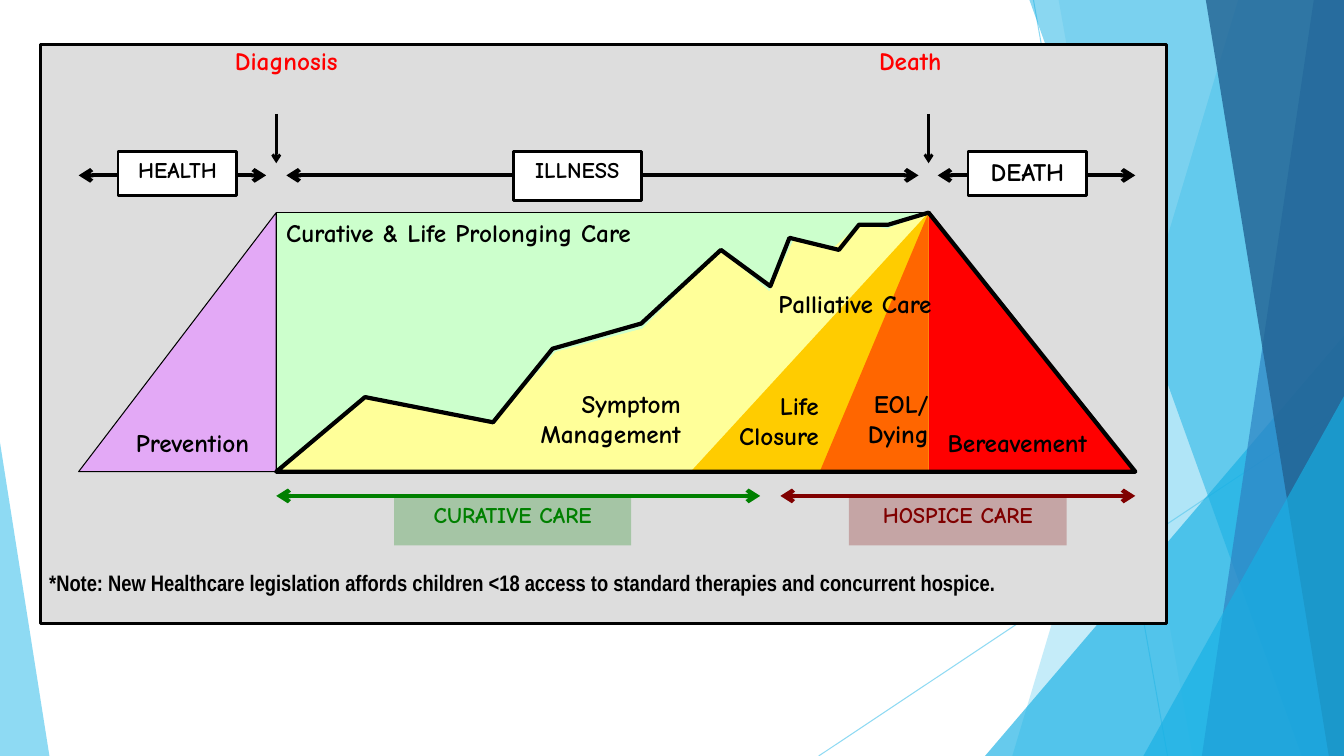
from lxml.etree import SubElement
from pptx import Presentation
from pptx.dml.color import RGBColor
from pptx.enum.shapes import MSO_CONNECTOR as CONNECTOR, MSO_SHAPE as SHAPE
from pptx.enum.text import MSO_ANCHOR as ANCHOR, PP_ALIGN as ALIGN
from pptx.oxml.ns import qn
from pptx.util import Inches, Pt

BLACK = RGBColor(0x00, 0x00, 0x00)
WHITE = RGBColor(0xFF, 0xFF, 0xFF)
GRAY = RGBColor(0xDD, 0xDD, 0xDD)
RED = RGBColor(0xFF, 0x00, 0x00)
PURPLE = RGBColor(0xE3, 0xA9, 0xF6)
MINT = RGBColor(0xCC, 0xFF, 0xCC)
YELLOW = RGBColor(0xFF, 0xFF, 0x99)
AMBER = RGBColor(0xFF, 0xCC, 0x00)
ORANGE = RGBColor(0xFF, 0x66, 0x00)
GREEN = RGBColor(0x00, 0x80, 0x00)
MAROON = RGBColor(0x80, 0x00, 0x00)
SKY = RGBColor(0x5F, 0xCB, 0xEF)
CYAN = RGBColor(0x17, 0xB0, 0xE4)
BLUE = RGBColor(0x2E, 0x83, 0xC3)
NAVY = RGBColor(0x22, 0x62, 0x92)

HAND_FONT = "Comic Neue"
NOTE_FONT = "Arial Narrow"
SLIDE_WIDTH, SLIDE_HEIGHT = 13.33, 7.5

BACK_LINES = [((10.25, 0), (11.58, SLIDE_HEIGHT)), ((SLIDE_WIDTH, 4.03), (8.12, SLIDE_HEIGHT))]
# top-left x, bottom-left x, colour, opacity
BACK_BANDS_LOW = [(12.28, 10.04, SKY, 36), (10.5, 11.83, SKY, 20)]
BACK_BANDS_HIGH = [(10.21, 12.91, CYAN, 50), (13.03, 11.92, BLUE, 70), (11.96, 13.18, NAVY, 80)]
BACK_TRIANGLE_LOW = [(9.77, 3.33, 3.56, 4.17, 1, CYAN, 66)]
BACK_TRIANGLES_HIGH = [(11.34, 3.93, 1.99, 3.57, 1, CYAN, 66), (0, 4.39, 0.49, 3.11, 0, SKY, 70)]

PANEL = (0.4, 0.44, 11.17, 5.75)
START_X, DIAGNOSIS_X, DEATH_X, END_X = 0.78, 2.74, 9.21, 11.26
TOP, BASE = 2.11, 4.68
PHASE_Y, CARE_Y = 1.74, 4.92
PEAK = (DEATH_X, TOP)
DEATH_BASE = (DEATH_X, BASE)
CORNERS = [PEAK, (END_X, BASE), (DIAGNOSIS_X, BASE)]

PREVENTION = [(DIAGNOSIS_X, BASE), (DIAGNOSIS_X, TOP), (START_X, BASE)]
REGIONS = [
    (CORNERS + [(3.62, 3.94), (4.89, 4.19), (5.51, 3.49), (6.37, 3.26), (7.15, 2.48),
                (7.63, 2.89), (7.87, 2.38), (8.24, 2.48), (8.53, 2.22), (8.8, 2.27)], YELLOW),
    ([DEATH_BASE, PEAK, (END_X, BASE)], RED),
    ([PEAK, DEATH_BASE, (6.85, BASE)], AMBER),
    ([PEAK, DEATH_BASE, (8.13, BASE)], ORANGE),
]
OUTLINE = CORNERS + [(3.62, 3.94), (4.89, 4.19), (5.48, 3.46), (6.36, 3.21), (7.15, 2.48),
                     (7.64, 2.84), (7.83, 2.36), (8.32, 2.48), (8.52, 2.23), (8.81, 2.23)]

SPANS = [
    (START_X, 2.64, PHASE_Y, BLACK),
    (2.84, 9.11, PHASE_Y, BLACK),
    (9.3, END_X, PHASE_Y, BLACK),
    (DIAGNOSIS_X, 7.54, CARE_Y, GREEN),
    (7.74, END_X, CARE_Y, MAROON),
]
CARE_BOXES = [
    ("CURATIVE CARE", (3.91, CARE_Y, 2.35, 0.49), GREEN),
    ("HOSPICE CARE", (8.42, CARE_Y, 2.16, 0.49), MAROON),
]
PHASE_BOXES = [
    ("HEALTH", (1.17, 1.5, 1.18, 0.44), 16),
    ("ILLNESS", (5.09, 1.5, 1.27, 0.49), 16),
    ("DEATH", (9.6, 1.5, 1.18, 0.44), 18),
]
LABELS = [
    ("Diagnosis", (1.76, 0.4, 2.16, 0.37), ALIGN.CENTER, RED),
    ("Death", (8.62, 0.4, 1.47, 0.43), ALIGN.LEFT, RED),
    ("Curative & Life Prolonging Care", (2.74, 2.11, 4.11, 1.96), ALIGN.LEFT, BLACK),
    ("Prevention", (0.88, 4.19, 2.06, 0.51), ALIGN.CENTER, BLACK),
    ("Bereavement", (9.11, 4.19, 1.96, 0.39), ALIGN.CENTER, BLACK),
    ("Palliative Care", (7.09, 2.81, 2.78, 0.86), ALIGN.CENTER, BLACK),
    ("Symptom\nManagement", (4.99, 3.8, 1.86, 0.51), ALIGN.RIGHT, BLACK),
    ("Life\nClosure", (6.95, 3.82, 1.27, 0.51), ALIGN.RIGHT, BLACK),
    ("EOL/\nDying", (8.13, 3.8, 1.18, 0.51), ALIGN.RIGHT, BLACK),
]
NOTE = ("*Note: New Healthcare legislation affords children <18 access to "
        "standard therapies and concurrent hospice.")

presentation = Presentation()
presentation.slide_width = Inches(SLIDE_WIDTH)
presentation.slide_height = Inches(SLIDE_HEIGHT)
slide = presentation.slides.add_slide(presentation.slide_layouts[6])
shapes = slide.shapes


def inches(values):
    return [Inches(value) for value in values]


def set_opacity(shape, percent):
    color = next(shape.element.spPr.iter(qn("a:srgbClr")))
    SubElement(color, qn("a:alpha"), val=str(percent * 1000))


def paint(shape, fill=None, line=None, width=0.75, opacity=100):
    shape.shadow.inherit = False
    if fill is None:
        shape.fill.background()
    else:
        shape.fill.solid()
        shape.fill.fore_color.rgb = fill
    if line is None:
        shape.line.fill.background()
    else:
        shape.line.color.rgb = line
        shape.line.width = Pt(width)
    if opacity < 100:
        set_opacity(shape, opacity)
    return shape


def add_polygon(points, **style):
    corners = [inches(point) for point in points]
    builder = shapes.build_freeform(*corners[0])
    builder.add_line_segments(corners[1:], close=True)
    return paint(builder.convert_to_shape(), **style)


def add_box(box, kind=SHAPE.RECTANGLE, **style):
    return paint(shapes.add_shape(kind, *inches(box)), **style)


def add_line(start, end, color, width, ends=()):
    line = shapes.add_connector(CONNECTOR.STRAIGHT, *inches(start + end))
    line.line.color.rgb = color
    line.line.width = Pt(width)
    properties = line.element.spPr
    for end_name in ends:
        SubElement(properties.find(qn("a:ln")), qn("a:" + end_name), type="arrow")
    SubElement(properties, qn("a:effectLst"))
    return line


def write(shape, text, size, color, align=ALIGN.CENTER, font=HAND_FONT):
    frame = shape.text_frame
    frame.text = text
    frame.word_wrap = True
    frame.vertical_anchor = ANCHOR.TOP
    for paragraph in frame.paragraphs:
        paragraph.alignment = align
        for run in paragraph.runs:
            run.font.name = font
            run.font.size = Pt(size)
            run.font.bold = True
            run.font.color.rgb = color


def add_bands(bands):
    for top_x, bottom_x, color, opacity in bands:
        add_polygon([(top_x, 0), (SLIDE_WIDTH, 0), (SLIDE_WIDTH, SLIDE_HEIGHT),
                     (bottom_x, SLIDE_HEIGHT)], fill=color, opacity=opacity)


def add_triangles(triangles):
    for *box, apex, color, opacity in triangles:
        triangle = add_box(box, SHAPE.ISOSCELES_TRIANGLE, fill=color, opacity=opacity)
        triangle.adjustments[0] = apex


for start, end in BACK_LINES:
    set_opacity(add_line(start, end, SKY, 0.75), 70)
add_bands(BACK_BANDS_LOW)
add_triangles(BACK_TRIANGLE_LOW)
add_bands(BACK_BANDS_HIGH)
add_triangles(BACK_TRIANGLES_HIGH)

add_box(PANEL, fill=GRAY, line=BLACK, width=2.25)
add_polygon(PREVENTION, fill=PURPLE, line=BLACK)
add_box((DIAGNOSIS_X, TOP, DEATH_X - DIAGNOSIS_X, BASE - TOP), fill=MINT, line=BLACK)
for points, color in REGIONS:
    add_polygon(points, fill=color)
add_polygon(OUTLINE, line=BLACK, width=3)

for text, box, color in CARE_BOXES:
    write(add_box(box, fill=color, opacity=25), text, 16, color)
for left, right, y, color in SPANS:
    add_line((left, y), (right, y), color, 3, ("headEnd", "tailEnd"))
for x in (DIAGNOSIS_X, DEATH_X):
    add_line((x, 1.13), (x, 1.62), BLACK, 2, ("tailEnd",))
for text, box, size in PHASE_BOXES:
    write(add_box(box, fill=WHITE, line=BLACK, width=2), text, size, BLACK)

for text, box, align, color in LABELS:
    write(shapes.add_textbox(*inches(box)), text, 18, color, align)
write(shapes.add_textbox(*inches((0.39, 5.6, 11.37, 0.41))), NOTE, 16, BLACK, ALIGN.LEFT, NOTE_FONT)

presentation.save("out.pptx")
